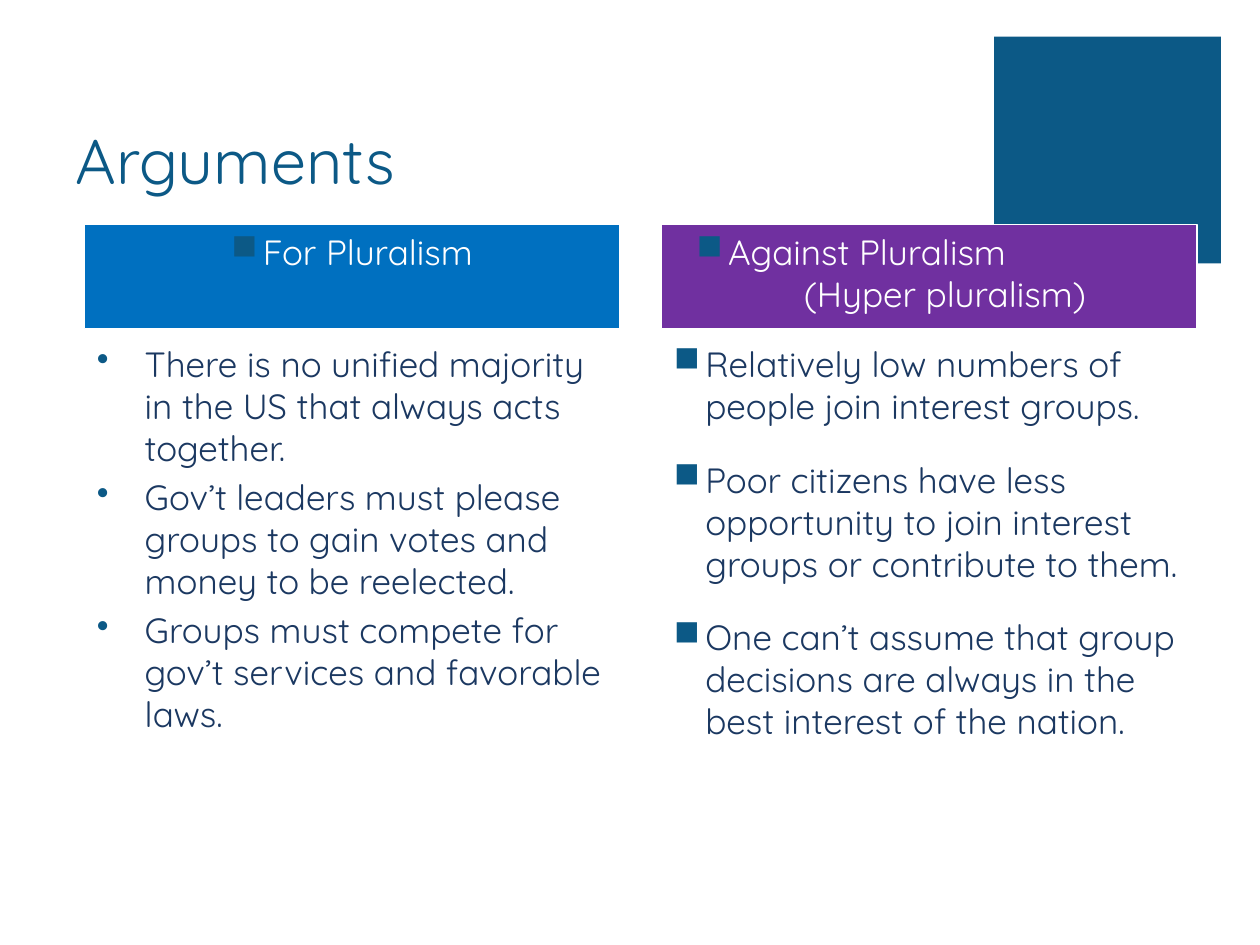
from lxml import etree
from pptx import Presentation
from pptx.dml.color import RGBColor
from pptx.enum import shapes, text
from pptx.oxml import ns
from pptx.util import Inches, Pt

FONT = "Quicksand"
TEAL, NAVY, WHITE = "0C5986", "1B3861", "FFFFFF"
COLUMN_WIDTH = 4.25
HEADER_TOP, HEADER_HEIGHT = 1.78, 0.83
BODY_TOP, BODY_HEIGHT = 2.67, 3.92

COLUMNS = [
    dict(left=0.67, fill="0070C0", bullet="•", hanging=0.38, before=4,
         header="For Pluralism", subheader=None,
         points=["There is no unified majority in the US that always acts together.",
                 "Gov’t leaders must please groups to gain votes and money to be reelected.",
                 "Groups must compete for gov’t services and favorable laws."]),
    dict(left=5.25, fill="7030A0", bullet="■", hanging=0.25, before=18,
         header="Against Pluralism", subheader="(Hyper pluralism)",
         points=["Relatively low numbers of people join interest groups.",
                 "Poor citizens have less opportunity to join interest groups or contribute to them.",
                 "One can’t assume that group decisions are always in the best interest of the nation."]),
]


def rgb(color):
    return RGBColor.from_string(color)


def inches(*lengths):
    return [Inches(length) for length in lengths]


def write(paragraph, words, size, color):
    paragraph.text = words
    for run in paragraph.runs:
        run.font.name = FONT
        run.font.size = Pt(size)
        run.font.color.rgb = rgb(color)


def indent(paragraph, margin, hanging=0.0):
    properties = paragraph._p.get_or_add_pPr()
    properties.set("marL", str(Inches(margin)))
    properties.set("indent", str(-Inches(hanging)))
    return properties


def add_bullet(paragraph, character, margin, hanging):
    properties = indent(paragraph, margin, hanging)
    bullet_color = etree.SubElement(properties, ns.qn("a:buClr"))
    etree.SubElement(bullet_color, ns.qn("a:srgbClr"), val=TEAL)
    etree.SubElement(properties, ns.qn("a:buChar"), char=character)


def add_rectangle(slide, box, fill, line=None):
    rectangle = slide.shapes.add_shape(shapes.MSO_SHAPE.RECTANGLE, *inches(*box))
    rectangle.shadow.inherit = False
    rectangle.fill.solid()
    rectangle.fill.fore_color.rgb = rgb(fill)
    if line:
        rectangle.line.color.rgb = rgb(line)
        rectangle.line.width = Pt(0.75)
    else:
        rectangle.line.fill.background()
    return rectangle


def add_text_frame(slide, box):
    frame = slide.shapes.add_textbox(*inches(*box)).text_frame
    frame.word_wrap = True
    return frame


def add_title(slide, words):
    frame = add_text_frame(slide, (0.5, 0.36, 7.12, 1.25))
    frame.vertical_anchor = text.MSO_ANCHOR.BOTTOM
    write(frame.paragraphs[0], words, 36, TEAL)


def add_points(slide, column):
    frame = add_text_frame(slide, (column["left"], BODY_TOP, COLUMN_WIDTH, BODY_HEIGHT))
    for number, point in enumerate(column["points"]):
        paragraph = frame.add_paragraph() if number else frame.paragraphs[0]
        write(paragraph, point, 20, NAVY)
        paragraph.space_before = Pt(column["before"])
        add_bullet(paragraph, column["bullet"], column["hanging"], column["hanging"])


def add_header(slide, column):
    """Header bar; with a subheader, the first line steps out to the left."""
    box = (column["left"], HEADER_TOP, COLUMN_WIDTH, HEADER_HEIGHT)
    frame = add_rectangle(slide, box, column["fill"], WHITE).text_frame
    frame.word_wrap = True
    frame.vertical_anchor = text.MSO_ANCHOR.TOP
    heading = frame.paragraphs[0]
    write(heading, column["header"], 20, WHITE)
    heading.space_before = Pt(18)
    if not column["subheader"]:
        heading.alignment = text.PP_ALIGN.CENTER
        add_bullet(heading, "■", 0.25, 0.25)
        return
    heading.alignment = text.PP_ALIGN.LEFT
    add_bullet(heading, "■", 0.43, 0.25)
    subheading = frame.add_paragraph()
    write(subheading, column["subheader"], 20, WHITE)
    subheading.alignment = text.PP_ALIGN.CENTER
    subheading.space_before = Pt(0)
    indent(subheading, 0.25)


def main():
    deck = Presentation()
    deck.slide_width, deck.slide_height = inches(10, 7.5)
    slide = deck.slides.add_slide(deck.slide_layouts[6])
    add_rectangle(slide, (7.89, 0.29, 1.8, 1.8), TEAL)
    add_title(slide, "Arguments")
    for column in COLUMNS:
        add_points(slide, column)
    for column in COLUMNS:
        add_header(slide, column)
    deck.save("out.pptx")


if __name__ == "__main__":
    main()
